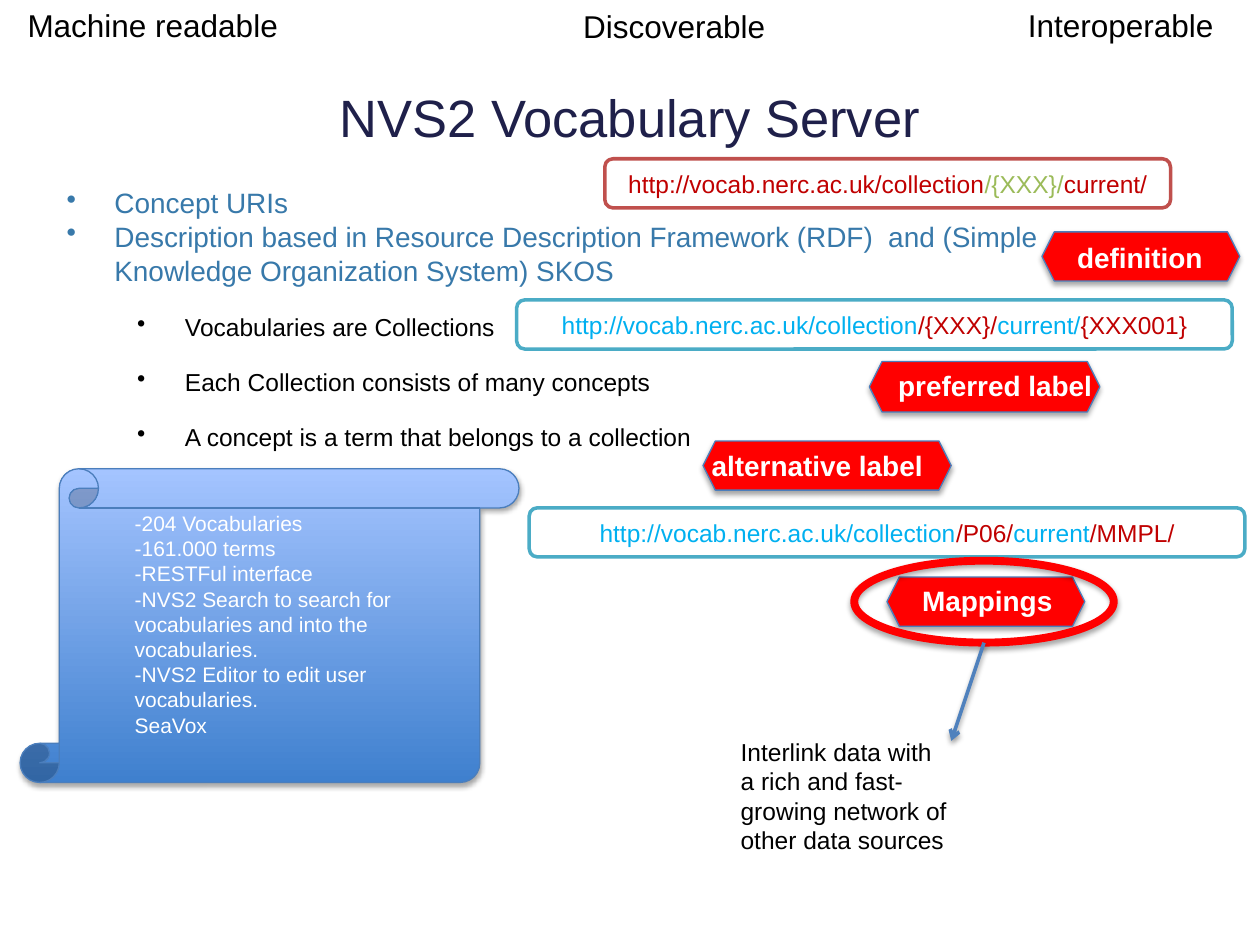
"""Build the NVS2 Vocabulary Server slide."""
from dataclasses import dataclass

from lxml.etree import SubElement
from pptx import Presentation
from pptx.dml.color import RGBColor as RGB
from pptx.enum.shapes import MSO_CONNECTOR as Link, MSO_SHAPE as Form
from pptx.enum.text import MSO_ANCHOR as Anchor, PP_ALIGN as Align
from pptx.oxml.ns import qn
from pptx.util import Inches, Pt


@dataclass(frozen=True)
class Theme:
    face: str = "Arial"
    title: int = 30
    head: int = 18
    lead: int = 16
    text: int = 14
    small: int = 12
    navy: str = "1F204A"
    steel: str = "3879AA"
    black: str = "000000"
    white: str = "FFFFFF"
    red: str = "FF0000"
    dark: str = "C00000"
    brick: str = "C0504D"
    green: str = "9BBB59"
    sky: str = "00B0F0"
    teal: str = "4BACC6"
    edge: str = "4B7EBC"
    blue: str = "4F81BD"
    deep: str = "3F80CE"
    pale: str = "A4C4FF"


class Deck:
    def __init__(self, theme):
        self.theme = theme
        self.file = Presentation()
        self.file.slide_width, self.file.slide_height = Inches(10), Inches(7.5)
        self.slide = self.file.slides.add_slide(self.file.slide_layouts[6])

    def font(self, para, size, color=None, bold=None):
        font = para.font
        font.name, font.size, font.bold = self.theme.face, Pt(size), bold
        if color:
            font.color.rgb = RGB.from_string(color)

    def shade(self, props, alpha=35, dist=1.8):
        node = props.find(qn("a:effectLst"))
        if node is None:
            node = SubElement(props, qn("a:effectLst"))
        cast = SubElement(node, qn("a:outerShdw"), blurRad=str(Pt(3.1)), dist=str(Pt(dist)),
                          dir="5400000", rotWithShape="0")
        tint = SubElement(cast, qn("a:srgbClr"), val=self.theme.black)
        SubElement(tint, qn("a:alpha"), val=str(alpha * 1000))

    def box(self, area, wrap=True, anchor=Anchor.TOP):
        frame = self.slide.shapes.add_textbox(*map(Inches, area)).text_frame
        frame.word_wrap, frame.vertical_anchor = wrap, anchor
        return frame

    def note(self, area, text, size, color, wrap=True, bold=None, align=Align.LEFT, anchor=Anchor.TOP):
        para = self.box(area, wrap, anchor).paragraphs[0]
        para.text, para.alignment = text, align
        self.font(para, size, color, bold)

    def form(self, kind, area, line, width, fill=None, shade=False):
        shape = self.slide.shapes.add_shape(kind, *map(Inches, area))
        shape.shadow.inherit = False
        if fill:
            shape.fill.solid()
            shape.fill.fore_color.rgb = RGB.from_string(fill)
        else:
            shape.fill.background()
        shape.line.color.rgb, shape.line.width = RGB.from_string(line), Pt(width)
        if shade:
            self.shade(shape._element.spPr)
        return shape

    def list(self, area, items):
        frame = self.box(area)
        for num, (text, size, color, left, gap) in enumerate(items):
            para = frame.add_paragraph() if num else frame.paragraphs[0]
            para.text = text
            props = para._p.get_or_add_pPr()
            props.set("marL", str(Inches(left)))
            props.set("indent", str(Inches(-0.38)))
            SubElement(props, qn("a:buChar"), char="•")
            para.line_spacing = gap
            para.space_before = Pt(size * 0.2 if num and gap > 1 else 0)
            self.font(para, size, color)

    def link(self, area, line, parts):
        shape = self.form(Form.ROUNDED_RECTANGLE, area, line, 2, self.theme.white)
        para = shape.text_frame.paragraphs[0]
        para.alignment = Align.CENTER
        self.font(para, self.theme.text)
        for text, color in parts:
            run = para.add_run()
            run.text = text
            run.font.color.rgb = RGB.from_string(color)

    def tag(self, area, spot, text):
        look = self.theme
        self.form(Form.HEXAGON, area, look.edge, 0.75, look.red, True)
        self.note(spot, text, look.lead, look.white, False, True)

    def scroll(self, area, lines):
        look = self.theme
        shape = self.form(Form.VERTICAL_SCROLL, area, look.edge, 0.75, shade=True)
        shape.fill.gradient()
        shape.fill.gradient_angle = 90
        for stop, color, place in zip(shape.fill.gradient_stops, (look.deep, look.pale), (0, 1)):
            stop.color.rgb, stop.position = RGB.from_string(color), place
        frame = shape.text_frame
        frame.word_wrap, frame.margin_bottom = True, Inches(0.23)
        for num, text in enumerate(lines):
            para = frame.add_paragraph() if num else frame.paragraphs[0]
            para.text, para.alignment = text, Align.LEFT
            para._p.get_or_add_pPr().set("marL", str(Inches(0.5)))
            self.font(para, look.small, look.white)

    def arrow(self, start, end):
        line = self.slide.shapes.add_connector(Link.STRAIGHT, *map(Inches, start + end))
        line.line.color.rgb, line.line.width = RGB.from_string(self.theme.blue), Pt(2)
        props = line._element.spPr
        SubElement(props.find(qn("a:ln")), qn("a:tailEnd"), type="arrow")
        self.shade(props, 38, 1.6)


def main():
    look = Theme()
    deck = Deck(look)
    root = "http://vocab.nerc.ac.uk/collection"

    deck.note((0.5, 0.3, 9, 1.25), "NVS2 Vocabulary Server", look.title, look.navy,
              align=Align.CENTER, anchor=Anchor.MIDDLE)
    lead = (look.lead, look.steel, 0.38)
    sub = (look.text, look.black, 0.94, 1.7)
    deck.list((0.43, 1.24, 9, 4.95), [
        ("Concept URIs", *lead, 1.7),
        ("Description based in Resource Description Framework (RDF)  and "
         "(Simple Knowledge Organization System) SKOS", *lead, 1),
        ("Vocabularies are Collections", *sub),
        ("Each Collection consists of many concepts", *sub),
        ("A concept is a term that belongs to a collection", *sub),
    ])

    deck.link((4.8, 1.26, 4.49, 0.39), look.brick,
              [(root, look.dark), ("/{XXX}/", look.green), ("current/", look.dark)])
    for left, top, parts in (
        (4.1, 2.38, ("/{XXX}/", "current/", "{XXX001}")),
        (4.2, 4.03, ("/P06/", "current", "/MMPL/")),
    ):
        hues = (look.sky, look.dark) * 2
        deck.link((left, top, 5.68, 0.39), look.teal, zip((root, *parts), hues))

    for area, spot, text in (
        ((8.27, 1.84, 1.57, 0.39), (8.45, 1.86, 1.21, 0.37), "definition"),
        ((5.58, 3.5, 1.97, 0.39), (5.55, 3.51, 1.9, 0.37), "alternative label"),
        ((7.04, 4.58, 1.57, 0.39), (7.22, 4.58, 1.25, 0.37), "Mappings"),
        ((6.9, 2.87, 1.83, 0.4), (7.03, 2.88, 1.76, 0.37), "preferred label"),
    ):
        deck.tag(area, spot, text)

    deck.form(Form.OVAL, (6.78, 4.45, 2.06, 0.65), look.red, 4.5, shade=True)
    deck.arrow((7.81, 5.1), (7.55, 5.88))
    deck.note((5.78, 5.8, 1.86, 1.04),
              "Interlink data with a rich and fast-growing network of other data sources",
              look.text, look.black)
    deck.scroll((0.16, 3.72, 3.96, 2.49), [
        "-204 Vocabularies",
        "-161.000 terms",
        "-RESTFul interface",
        "-NVS2 Search to search for vocabularies and into the vocabularies.",
        "-NVS2 Editor to edit user vocabularies.",
        "SeaVox",
    ])
    for left, top, width, text in (
        (0.12, 0, 2.21, "Machine readable"),
        (4.53, 0.01, 1.86, "Discoverable"),
        (8.06, 0, 1.86, "Interoperable"),
    ):
        deck.note((left, top, width, 0.4), text, look.head, look.black)

    deck.file.save("out.pptx")


if __name__ == "__main__":
    main()
